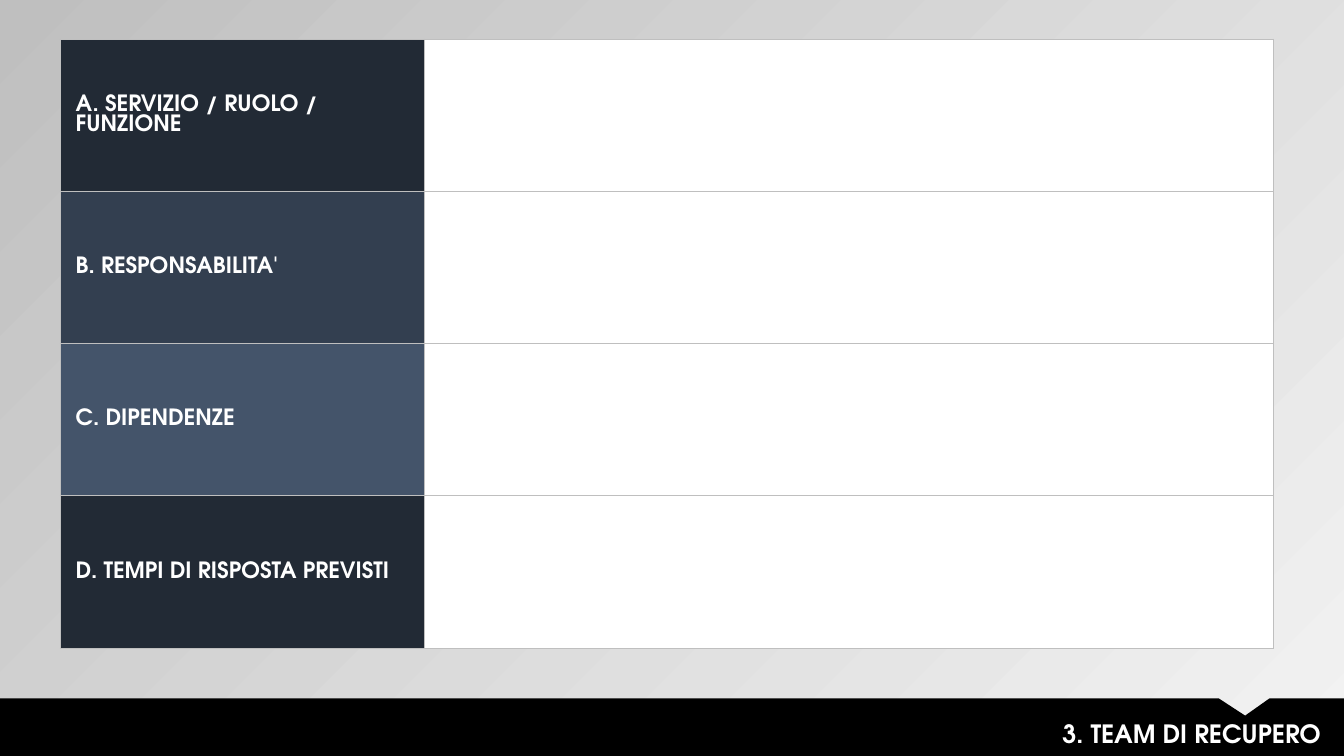
from lxml import etree
from pptx import Presentation
from pptx.dml.color import RGBColor
from pptx.enum.text import MSO_ANCHOR, PP_ALIGN
from pptx.oxml.ns import qn
from pptx.util import Inches, Pt


def paint(fill, hex_color):
    fill.solid()
    fill.fore_color.rgb = RGBColor.from_string(hex_color)


def write(frame, text, size):
    """Put one bold white line of text into a text frame."""
    paragraph = frame.paragraphs[0]
    paragraph.text = text
    font = paragraph.runs[0].font
    font.name, font.size, font.bold = "TeX Gyre Adventor", Pt(size), True
    paint(font.fill, "FFFFFF")
    return paragraph


TOPICS = [
    ("A. SERVIZIO / RUOLO / FUNZIONE", "222A35"),
    ("B. RESPONSABILITA'", "333F50"),
    ("C. DIPENDENZE", "44546A"),
    ("D. TEMPI DI RISPOSTA PREVISTI", "222A35"),
]
WIDTH, HEIGHT = 13.33, 7.5
ROW_HEIGHT = 1.51
COLUMN_WIDTHS = (3.61, 8.42)
FOOTER_TOP = 6.93

deck = Presentation()
deck.slide_width, deck.slide_height = Inches(WIDTH), Inches(HEIGHT)
slide = deck.slides.add_slide(deck.slide_layouts[6])

backdrop = slide.background.fill
backdrop.gradient()
backdrop.gradient_angle = 135
for stop, shade in zip(backdrop.gradient_stops, ("F2F2F2", "BFBFBF")):
    stop.color.rgb = RGBColor.from_string(shade)

# Recovery team table
team = slide.shapes.add_table(
    len(TOPICS), len(COLUMN_WIDTHS), Inches(0.6), Inches(0.39),
    Inches(sum(COLUMN_WIDTHS)), Inches(ROW_HEIGHT * len(TOPICS))).table
team.first_row = team.horz_banding = False
for column, width in zip(team.columns, COLUMN_WIDTHS):
    column.width = Inches(width)

for row, (topic, shade) in zip(team.rows, TOPICS):
    row.height = Inches(ROW_HEIGHT)
    heading, answer = row.cells
    write(heading.text_frame, topic, 16)
    for cell, color in ((heading, shade), (answer, "FFFFFF")):
        cell.vertical_anchor = MSO_ANCHOR.MIDDLE
        cell.margin_left = cell.margin_right = Inches(0.15)
        cell.margin_top = cell.margin_bottom = Inches(0.15)
        properties = cell._tc.get_or_add_tcPr()
        for side in ("a:lnL", "a:lnR", "a:lnT", "a:lnB"):
            border = etree.SubElement(properties, qn(side), w=str(Pt(1)))
            border_fill = etree.SubElement(border, qn("a:solidFill"))
            etree.SubElement(border_fill, qn("a:srgbClr"), val="BFBFBF")
        paint(cell.fill, color)

# Footer band with a notch above the title
outline = slide.shapes.build_freeform(0, Inches(FOOTER_TOP))
outline.add_line_segments([
    (Inches(x), Inches(y)) for x, y in (
        (12.09, FOOTER_TOP), (12.35, 7.1), (12.59, FOOTER_TOP),
        (WIDTH, FOOTER_TOP), (WIDTH, HEIGHT), (0, HEIGHT))])
footer = outline.convert_to_shape()
footer.shadow.inherit = False
paint(footer.fill, "000000")
footer.line.fill.background()

title = slide.shapes.add_textbox(
    Inches(4.14), Inches(7.08), Inches(9.06), Inches(0.4)).text_frame
title.word_wrap = True
write(title, "3. TEAM DI RECUPERO", 18).alignment = PP_ALIGN.RIGHT

deck.save("out.pptx")
